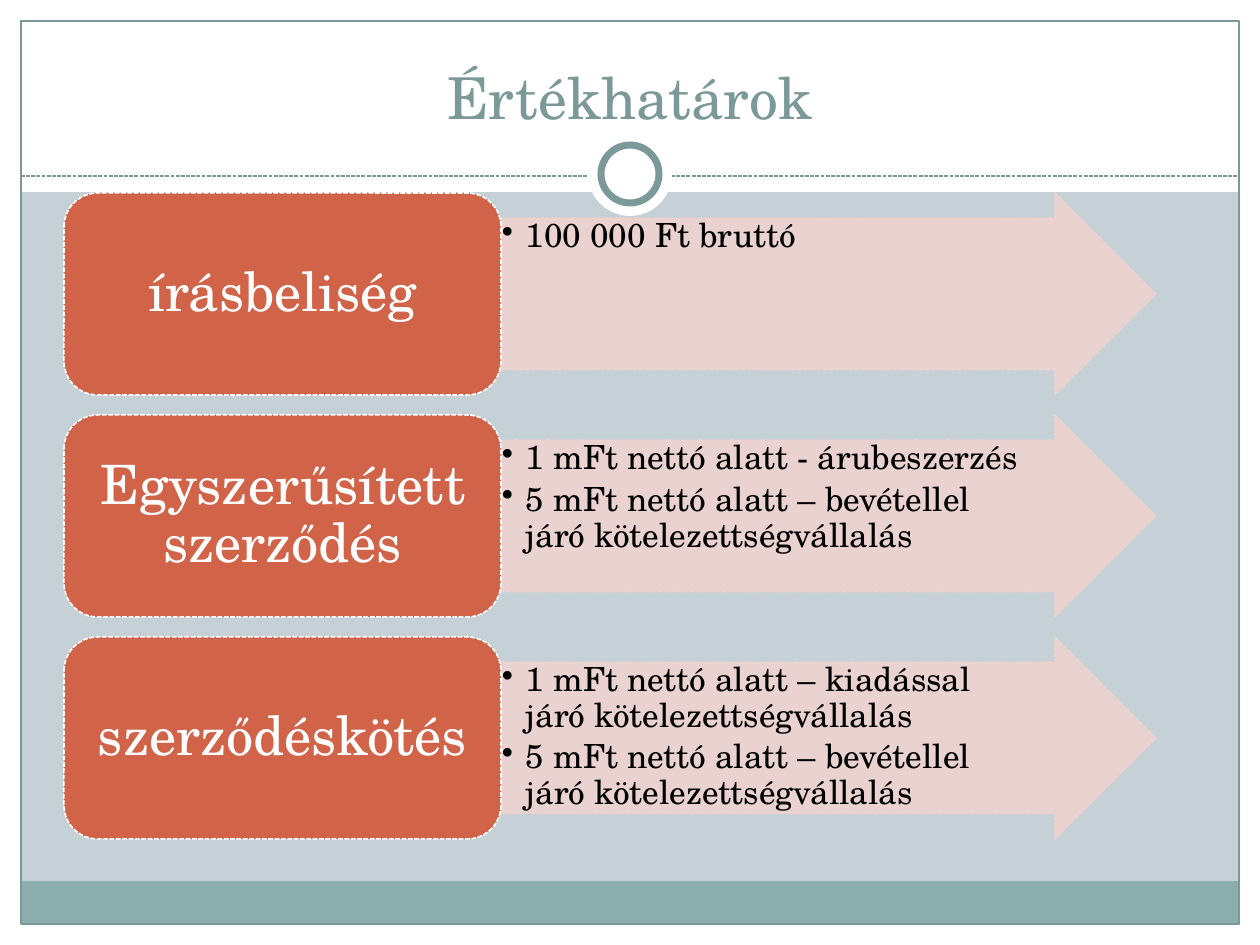
from pptx import Presentation, util as u
from pptx.dml.color import RGBColor
from pptx.enum import dml, shapes, text
from pptx.oxml.ns import qn
from lxml import etree

PX = 914400 / 126
FONT = "TeX Gyre Schola"
COLORS = {
    "background": "C5D1D7", "white": "FFFFFF", "band": "8CADAE", "frame": "7C999A",
    "arrow": "EED3D0", "label": "D16349", "black": "000000",
}
ROWS = [
    ("írásbeliség", ["100 000 Ft bruttó"]),
    ("Egyszerűsített szerződés", [
        "1 mFt nettó alatt - árubeszerzés",
        "5 mFt nettó alatt – bevétellel járó kötelezettségvállalás"]),
    ("szerződéskötés", [
        "1 mFt nettó alatt – kiadással járó kötelezettségvállalás",
        "5 mFt nettó alatt – bevétellel járó kötelezettségvállalás"]),
]
ROW_TOP, ROW_PITCH, ROW_HEIGHT = 193, 222, 202
MARGIN = 21


def px(*lengths):
    """Turn pixel lengths into a list of EMU."""
    return [u.Emu(round(length * PX)) for length in lengths]


def rgb(name):
    """Look up a colour by its name."""
    return RGBColor.from_string(COLORS[name])


def set_line(line, color, width, dashed=False):
    """Format an outline or a rule."""
    line.color.rgb = rgb(color)
    line.width = u.Pt(width)
    if dashed:
        line.dash_style = dml.MSO_LINE.SQUARE_DOT


def add_figure(slide, kind, box, fill=None, line=None):
    """Add a flat preset shape; line holds colour, width and dashing."""
    figure = slide.shapes.add_shape(kind, *px(*box))
    figure.shadow.inherit = False
    if fill:
        figure.fill.solid()
        figure.fill.fore_color.rgb = rgb(fill)
    else:
        figure.fill.background()
    if line:
        set_line(figure.line, *line)
    else:
        figure.line.fill.background()
    return figure


def set_opacity(figure, percent):
    """Make fill and outline partly transparent."""
    for color in figure.element.spPr.iter(qn("a:srgbClr")):
        etree.SubElement(color, qn("a:alpha"), val=str(percent * 1000))


def set_frame(frame, anchor, insets):
    """Set wrapping, anchoring and left, top, right, bottom insets."""
    frame.word_wrap = True
    frame.vertical_anchor = anchor
    (frame.margin_left, frame.margin_top,
     frame.margin_right, frame.margin_bottom) = px(*insets)


def style(paragraph, size, color, align):
    """Set font and alignment of a paragraph."""
    paragraph.alignment = align
    paragraph.font.name = FONT
    paragraph.font.size = u.Pt(size)
    paragraph.font.color.rgb = rgb(color)


def add_bullet(paragraph, indent):
    """Give a paragraph a hanging round bullet."""
    paragraph.level = 1
    properties = paragraph._p.get_or_add_pPr()
    hang = px(indent)[0]
    properties.set("marL", str(hang))
    properties.set("indent", str(-hang))
    etree.SubElement(properties, qn("a:buChar"), char="•").getparent()
    properties.append(properties.find(qn("a:defRPr")))


def add_backdrop(slide):
    """Draw the white margins, footer band, frame, rule and ring."""
    rect, oval = shapes.MSO_SHAPE.RECTANGLE, shapes.MSO_SHAPE.OVAL
    for box in ((0, 924, 1260, MARGIN), (0, 0, 1260, 192),
                (0, 0, MARGIN, 945), (1260 - MARGIN, 0, MARGIN, 945)):
        add_figure(slide, rect, box, "white")
    add_figure(slide, rect, (MARGIN, 881, 1218, 43), "band")
    add_figure(slide, rect, (MARGIN, MARGIN, 1218, 903), line=("frame", 0.75))
    rule = slide.shapes.add_connector(
        shapes.MSO_CONNECTOR.STRAIGHT, *px(MARGIN, 176, 1260 - MARGIN, 176))
    set_line(rule.line, "frame", 0.75, True)
    etree.SubElement(rule._element.spPr, qn("a:effectLst"))
    add_figure(slide, oval, (588, 132, 84, 84), "white")
    add_figure(slide, oval, (601, 145, 58, 58), "white", ("frame", 4))


def add_title(slide, wording):
    """Place the title in front of the backdrop."""
    title = slide.shapes.title
    slide.shapes._spTree.append(title._element)
    title.left, title.top, title.width, title.height = px(42, 32, 1176, 105)
    title.text_frame.text = wording
    set_frame(title.text_frame, text.MSO_ANCHOR.BOTTOM, (13, 6, 13, 6))
    style(title.text_frame.paragraphs[0], 33, "frame", text.PP_ALIGN.CENTER)


def add_arrow(slide, top, limits):
    """Add the arrow that lists the limits."""
    arrow = add_figure(slide, shapes.MSO_SHAPE.RIGHT_ARROW, (501, top, 655, ROW_HEIGHT),
                       "arrow", ("arrow", 0.9, True))
    arrow.adjustments[0], arrow.adjustments[1] = 0.75, 0.5
    set_opacity(arrow, 90)
    frame = arrow.text_frame
    set_frame(frame, text.MSO_ANCHOR.TOP, (1, 1, 50, 1))
    frame.text = "\n".join(limits)
    for paragraph in frame.paragraphs:
        paragraph.line_spacing = 0.9
        paragraph.space_after = u.Pt(3)
        style(paragraph, 19, "black", text.PP_ALIGN.LEFT)
        add_bullet(paragraph, 24)


def add_label(slide, top, wording):
    """Add the rounded label of a row."""
    label = add_figure(slide, shapes.MSO_SHAPE.ROUNDED_RECTANGLE, (64, top, 437, ROW_HEIGHT),
                       "label", ("white", 0.9, True))
    set_frame(label.text_frame, text.MSO_ANCHOR.MIDDLE, (16, 8, 16, 8))
    label.text_frame.text = wording
    paragraph = label.text_frame.paragraphs[0]
    paragraph.line_spacing = 0.9
    style(paragraph, 31, "white", text.PP_ALIGN.CENTER)


def main():
    """Build and save the slide."""
    deck = Presentation()
    deck.slide_width, deck.slide_height = px(1260, 945)
    slide = deck.slides.add_slide(deck.slide_layouts[5])
    slide.background.fill.solid()
    slide.background.fill.fore_color.rgb = rgb("background")
    add_backdrop(slide)
    add_title(slide, "Értékhatárok")
    for index, (wording, limits) in enumerate(ROWS):
        top = ROW_TOP + index * ROW_PITCH
        add_arrow(slide, top, limits)
        add_label(slide, top, wording)
    deck.save("out.pptx")


if __name__ == "__main__":
    main()
